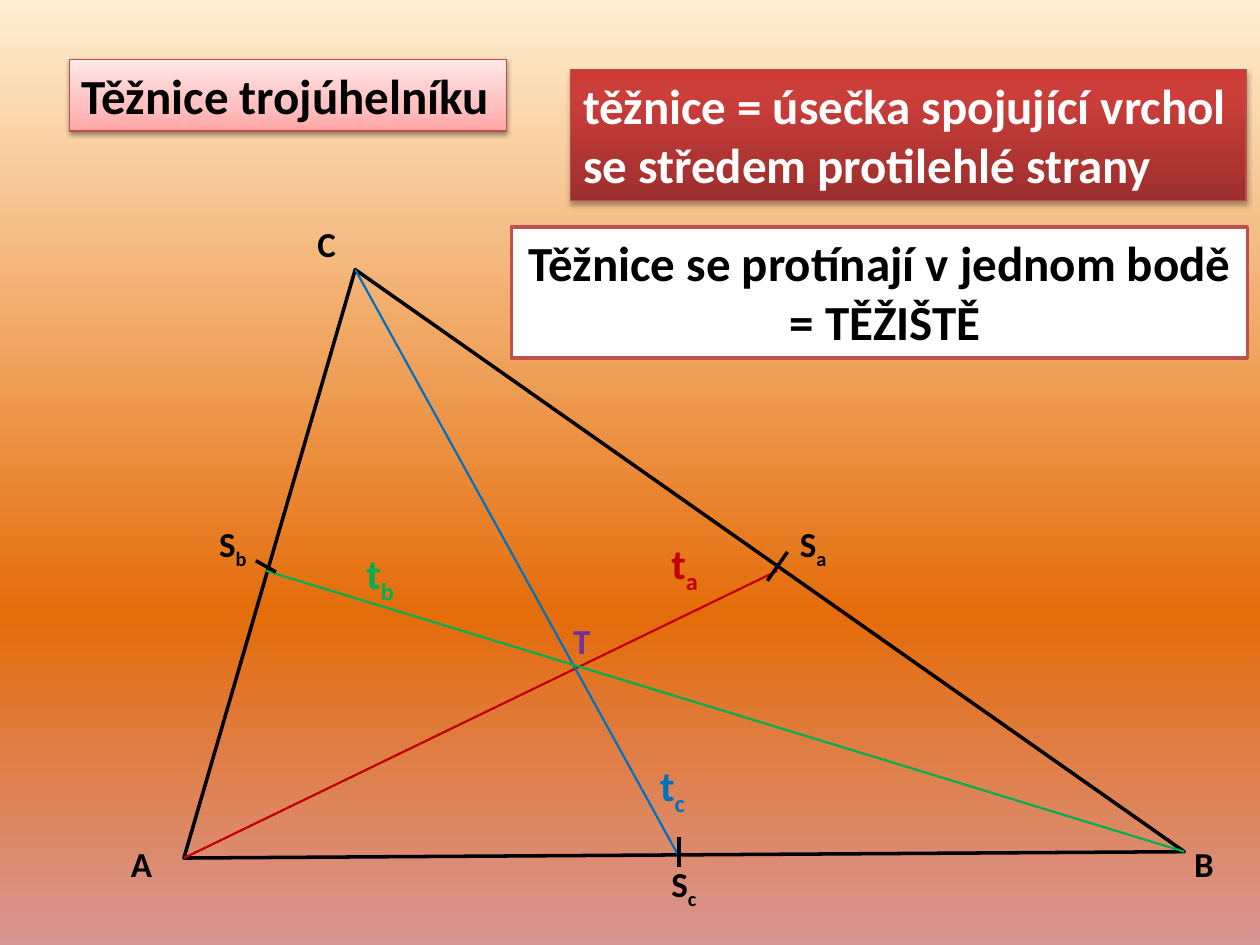
from lxml import etree
from pptx import Presentation
from pptx.dml.color import RGBColor
from pptx.enum.shapes import MSO_CONNECTOR, MSO_SHAPE
from pptx.enum.text import MSO_ANCHOR, MSO_AUTO_SIZE, PP_ALIGN
from pptx.oxml.ns import qn
from pptx.util import Inches, Pt

STRAIGHT = MSO_CONNECTOR.STRAIGHT
RECTANGLE = MSO_SHAPE.RECTANGLE
TOP = MSO_ANCHOR.TOP
GROW = MSO_AUTO_SIZE.SHAPE_TO_FIT_TEXT
LEFT, CENTER = PP_ALIGN.LEFT, PP_ALIGN.CENTER

BLACK = RGBColor(0x00, 0x00, 0x00)
WHITE = RGBColor(0xFF, 0xFF, 0xFF)
RED = RGBColor(0xC0, 0x00, 0x00)
GREEN = RGBColor(0x00, 0xB0, 0x50)
BLUE = RGBColor(0x00, 0x70, 0xC0)
PURPLE = RGBColor(0x70, 0x30, 0xA0)
EDGE = RGBColor(0xBF, 0x4C, 0x48)
FRAME = RGBColor(0xC0, 0x50, 0x4D)
SKY = [(0, RGBColor(0xFF, 0xEF, 0xD1)), (65, RGBColor(0xE4, 0x6C, 0x0A)),
       (100, RGBColor(0xD9, 0x96, 0x94))]
PINK = [(0, RGBColor(0xFF, 0xA6, 0xA5)), (35, RGBColor(0xFF, 0xC0, 0xBF)),
        (100, RGBColor(0xFF, 0xE7, 0xE7))]
CRIMSON = [(0, RGBColor(0x9C, 0x2F, 0x2D)), (80, RGBColor(0xCB, 0x3E, 0x3A)),
           (100, RGBColor(0xCE, 0x3B, 0x37))]

FONT = "Calibri"
A, B, C = (1.46, 6.81), (9.4, 6.76), (2.82, 2.14)
MEDIANS = [(A, (6.17, 4.53), RED), (C, (5.39, 6.8), BLUE), (B, (2.11, 4.53), GREEN)]
TICKS = [((5.39, 6.64), (5.39, 6.88)), ((6.25, 4.38), (6.09, 4.61)),
         ((2.03, 4.45), (2.19, 4.54))]
LABELS = [
    ("A", "", 0.94, 6.64, 0.37, 20, BLACK),
    ("B", "", 9.38, 6.64, 0.36, 20, BLACK),
    ("C", "", 2.42, 1.72, 0.35, 20, BLACK),
    ("t", "a", 5.23, 4.22, 0.43, 24, RED),
    ("t", "b", 2.81, 4.3, 0.44, 24, GREEN),
    ("t", "c", 5.14, 5.98, 0.41, 24, BLUE),
    ("T", "", 4.45, 4.87, 0.34, 20, PURPLE),
    ("S", "a", 6.25, 4.1, 0.43, 20, BLACK),
    ("S", "b", 1.64, 4.1, 0.44, 20, BLACK),
    ("S", "c", 5.23, 6.8, 0.41, 20, BLACK),
]


def set_gradient(fill, element, stops, angle):
    """Fill with a linear gradient whose stops are percent and colour."""
    fill.gradient()
    fill.gradient_angle = angle
    stop_list = element.find(".//" + qn("a:gsLst"))
    for stop in list(stop_list):
        stop_list.remove(stop)
    for percent, color in stops:
        stop = etree.SubElement(stop_list, qn("a:gs"), pos=str(percent * 1000))
        etree.SubElement(stop, qn("a:srgbClr"), val=str(color))


def add_shadow(shape, opacity, distance):
    """Cast a soft black shadow straight down."""
    shape.shadow.inherit = False
    effects = shape.element.spPr.find(qn("a:effectLst"))
    shadow = etree.SubElement(effects, qn("a:outerShdw"), blurRad=str(Pt(3.1)),
                              dist=str(Pt(distance)), dir="5400000", rotWithShape="0")
    color = etree.SubElement(shadow, qn("a:srgbClr"), val=str(BLACK))
    etree.SubElement(color, qn("a:alpha"), val=str(opacity * 1000))


def add_span(para, text, size, color, subscript=False):
    """Append one bold run."""
    span = para.add_run()
    span.text = text
    font = span.font
    font.name, font.size, font.bold = FONT, Pt(size), True
    font.color.rgb = color
    if subscript:
        font._element.set("baseline", "-25000")


def prepare_frame(box):
    """Return a text frame that grows with unwrapped text."""
    frame = box.text_frame
    frame.word_wrap = False
    frame.auto_size = GROW
    frame.vertical_anchor = TOP
    return frame


def add_label(page, letter, index, left, top, width, size, color):
    """Name a point or a median, with an optional subscript."""
    height = 0.5 if size == 24 else 0.44
    box = page.shapes.add_textbox(Inches(left), Inches(top), Inches(width), Inches(height))
    para = prepare_frame(box).paragraphs[0]
    add_span(para, letter, size, color)
    if index:
        add_span(para, index, size, color, subscript=True)


def add_banner(page, lines, left, top, width, height, color, edge, edge_width, align=LEFT):
    """Add a bordered rectangle of heading text and return it."""
    box = page.shapes.add_shape(RECTANGLE, Inches(left), Inches(top),
                                Inches(width), Inches(height))
    box.shadow.inherit = False
    box.line.color.rgb = edge
    box.line.width = Pt(edge_width)
    frame = prepare_frame(box)
    for number, line in enumerate(lines):
        para = frame.add_paragraph() if number else frame.paragraphs[0]
        para.alignment = align
        add_span(para, line, 28, color)
    return box


def add_segment(page, start, end, color, width):
    """Draw a straight line between two points."""
    points = [Inches(value) for value in (*start, *end)]
    segment = page.shapes.add_connector(STRAIGHT, *points)
    segment.line.color.rgb = color
    segment.line.width = Pt(width)
    etree.SubElement(segment.element.spPr, qn("a:effectLst"))


def add_triangle(page):
    """Outline the triangle ABC."""
    corners = [(Inches(x), Inches(y)) for x, y in (C, A, B)]
    builder = page.shapes.build_freeform(*corners[0])
    builder.add_line_segments(corners[1:], close=True)
    triangle = builder.convert_to_shape()
    triangle.shadow.inherit = False
    triangle.fill.background()
    triangle.line.color.rgb = BLACK
    triangle.line.width = Pt(2)


def main():
    """Build the slide on triangle medians."""
    deck = Presentation()
    deck.slide_width, deck.slide_height = Inches(10), Inches(7.5)
    page = deck.slides.add_slide(deck.slide_layouts[6])
    set_gradient(page.background.fill, page.element, SKY, 270)

    add_triangle(page)
    for start, end, color in MEDIANS:
        add_segment(page, start, end, color, 1.25)
    for start, end in TICKS:
        add_segment(page, start, end, BLACK, 2)
    for label in LABELS:
        add_label(page, *label)

    title = add_banner(page, ["Těžnice trojúhelníku"],
                       0.55, 0.47, 3.47, 0.57, BLACK, EDGE, 0.75)
    set_gradient(title.fill, title.element, PINK, 90)
    add_shadow(title, 38, 1.6)

    definition = add_banner(
        page, ["těžnice = úsečka spojující vrchol", "se středem protilehlé strany"],
        4.53, 0.55, 5.36, 1.04, WHITE, EDGE, 0.75)
    set_gradient(definition.fill, definition.element, CRIMSON, 90)
    add_shadow(definition, 35, 1.8)

    centroid = add_banner(
        page, ["Těžnice se protínají v jednom bodě", " = TĚŽIŠTĚ"],
        4.06, 1.8, 5.84, 1.04, BLACK, FRAME, 2, CENTER)
    centroid.fill.solid()
    centroid.fill.fore_color.rgb = WHITE

    deck.save("out.pptx")


if __name__ == "__main__":
    main()
